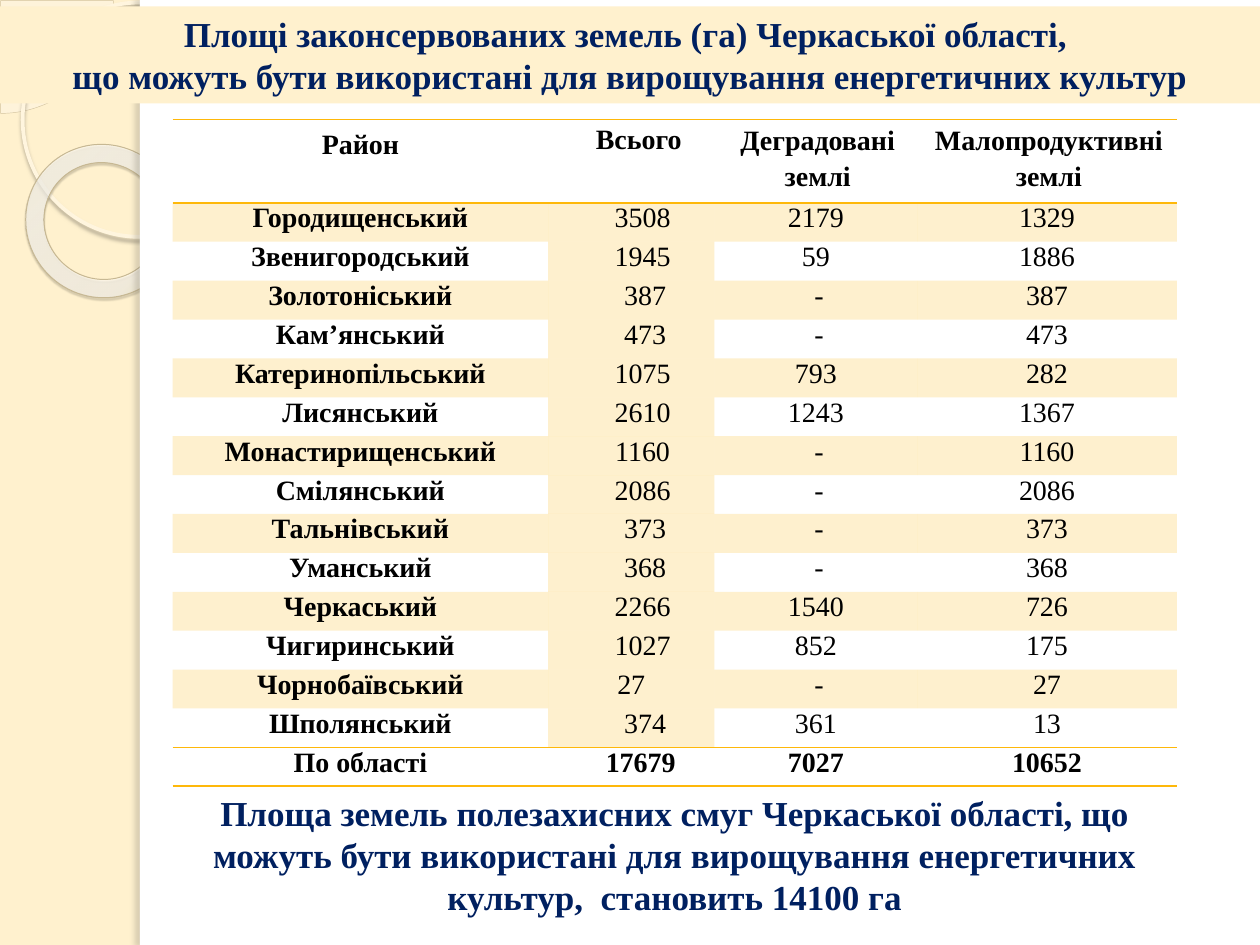
"""Build a slide with a table of set-aside land areas by district."""
from lxml import etree
from pptx import Presentation
from pptx import util as u
from pptx.dml.color import RGBColor
from pptx.enum import shapes, text
from pptx.oxml.ns import nsdecls, qn

FONT = "Times New Roman"
NAVY, BLACK, WHITE, CREAM, GOLD = "002060", "000000", "FFFFFF", "FFF1CE", "FEB80A"
TITLE = [
    "Площі законсервованих земель (га) Черкаської області, ",
    "що можуть бути використані для вирощування енергетичних культур",
]
CLOSING = [
    "Площа земель полезахисних смуг Черкаської області, що можуть бути "
    "використані для вирощування енергетичних культур,  становить 14100 га"
]
ROWS = [
    ("Район", "Всього", "Деградовані\nземлі", "Малопродуктивні\nземлі"),
    ("Городищенський", "3508", "2179", "1329"),
    ("Звенигородський", "1945", "59", "1886"),
    ("Золотоніський", "387", "-", "387"),
    ("Кам’янський", "473", "-", "473"),
    ("Катеринопільський", "1075", "793", "282"),
    ("Лисянський", "2610", "1243", "1367"),
    ("Монастирищенський", "1160", "-", "1160"),
    ("Смілянський", "2086", "-", "2086"),
    ("Тальнівський", "373", "-", "373"),
    ("Уманський", "368", "-", "368"),
    ("Черкаський", "2266", "1540", "726"),
    ("Чигиринський", "1027", "852", "175"),
    ("Чорнобаївський", "27", "-", "27"),
    ("Шполянський", "374", "361", "13"),
    ("По області", "17679", "7027", "10652"),
]
LAST = len(ROWS) - 1
COLUMN_WIDTHS = (2.98, 1.32, 1.61, 2.06)
HEADER_HEIGHT, TABLE_HEIGHT = 0.66, 5.29
HEADER_TOPS = (0.08, 0.04, 0.01, 0.01)
TOTAL_INDENTS = {2: 0, 3: 0.22, 4: 0.18, 5: 0.15, 6: 0.12}
NO_STYLE = "{2D5ABB26-0587-4C30-8999-92F81FD0307C}"
RING_STOPS = [(0, "FFFCF6", 70), (70, "FFFEFB", 55), (100, "F0D28E", 60)]


def color(value):
    return RGBColor.from_string(value)


def inches(values):
    return [u.Inches(value) for value in values]


def xml(markup):
    return etree.fromstring(markup.replace(">", f" {nsdecls('a')}>", 1))


def tint(value, alpha):
    return f'<a:srgbClr val="{value}"><a:alpha val="{alpha * 1000}"/></a:srgbClr>'


def fill_solid(fill, value, alpha=100, owner=None):
    fill.solid()
    fill.fore_color.rgb = color(value)
    if alpha < 100:
        solid = owner.find(qn("a:solidFill"))
        solid.getparent().replace(solid, xml(f"<a:solidFill>{tint(value, alpha)}</a:solidFill>"))


def add_shape(slide, kind, box, fill=None, alpha=100, line=None, shadow=None):
    shape = slide.shapes.add_shape(kind, *inches(box))
    properties = shape.element.spPr
    if fill:
        fill_solid(shape.fill, fill, alpha, properties)
    else:
        shape.fill.background()
    if line:
        shape.line.color.rgb = color(line[0])
        shape.line.width = u.Pt(line[1])
    else:
        shape.line.fill.background()
    shape.shadow.inherit = False
    if shadow:
        value, opacity, blur, distance, angle = shadow
        properties.find(qn("a:effectLst")).append(xml(
            f'<a:outerShdw blurRad="{u.Pt(blur)}" dist="{u.Pt(distance)}" '
            f'dir="{angle * 60000}">{tint(value, opacity)}</a:outerShdw>'))
    return shape


def write(frame, lines, size, value, bold=True, spacing=None):
    frame.text = "\n".join(lines)
    for paragraph in frame.paragraphs:
        paragraph.alignment = text.PP_ALIGN.CENTER
        paragraph.line_spacing = spacing
        font = paragraph.font
        font.name, font.size, font.bold = FONT, u.Pt(size), bold
        font.color.rgb = color(value)


def add_decoration(slide):
    kinds = shapes.MSO_SHAPE
    pie = add_shape(slide, kinds.PIE, (-0.89, -0.89, 1.79, 1.79), "FEFAF4", 33, ("D3C39F", 0.25))
    pie.adjustments[0], pie.adjustments[1] = 0, 54.02
    add_shape(slide, kinds.OVAL, (0.18, 0.02, 1.86, 1.86), line=("FFF5DE", 2.15),
              shadow=("B0A68F", 85, 2, 2, 90))
    ring = add_shape(slide, kinds.DONUT, (0.2, 1.15, 1.23, 1.21), line=("C7B893", 0.58),
                     shadow=("5A5444", 35, 1, 1.2, 75))
    ring.adjustments[0], ring.rotation = 0.12, 38.6
    stops = "".join(f'<a:gs pos="{place * 1000}">{tint(value, alpha)}</a:gs>'
                    for place, value, alpha in RING_STOPS)
    properties = ring.element.spPr
    properties.replace(properties.find(qn("a:noFill")), xml(
        f'<a:gradFill rotWithShape="1"><a:gsLst>{stops}</a:gsLst><a:path path="circle">'
        '<a:fillToRect l="-408000" t="-50000" r="508000" b="150000"/></a:path></a:gradFill>'))
    add_shape(slide, kinds.RECTANGLE, (1.11, 0, 8.89, 7.5), WHITE)
    add_shape(slide, kinds.RECTANGLE, (1.11, 0, 0.08, 7.5), WHITE,
              shadow=("736F63", 25, 3, 3, 180))


def add_title(slide):
    title = slide.shapes.title
    title.left, title.top, title.width, title.height = inches((0, 0.05, 10, 0.77))
    fill_solid(title.fill, CREAM)
    write(title.text_frame, TITLE, 20, NAVY, spacing=1)
    title.text_frame.auto_size = text.MSO_AUTO_SIZE.NONE
    title.text_frame.vertical_anchor = text.MSO_ANCHOR.TOP
    slide.shapes.element.append(title.element)


def left_indent(row, column, value):
    if column == 1:
        return TOTAL_INDENTS[len(value)]
    if value == "-":
        return 0.05
    return 0.03 if row == 0 and column > 1 else 0


def add_area_table(slide):
    box = inches((1.37, 0.95, sum(COLUMN_WIDTHS), TABLE_HEIGHT))
    frame = slide.shapes.add_table(len(ROWS), len(COLUMN_WIDTHS), *box)
    table = frame.table
    table.first_row = table.horz_banding = False
    next(frame.element.iter(qn("a:tableStyleId"))).text = NO_STYLE
    for column, width in zip(table.columns, COLUMN_WIDTHS):
        column.width = u.Inches(width)
    for r, values in enumerate(ROWS):
        table.rows[r].height = u.Inches((TABLE_HEIGHT - HEADER_HEIGHT) / LAST if r else HEADER_HEIGHT)
        for c, value in enumerate(values):
            cell = table.cell(r, c)
            cell.margin_left = u.Inches(left_indent(r, c, value))
            cell.margin_top = u.Inches(0 if r else HEADER_TOPS[c])
            cell.margin_right = cell.margin_bottom = 0
            lines = value.split("\n")
            edge_row = r in (0, LAST)
            write(cell.text_frame, lines, 16, BLACK, edge_row or c == 0,
                  u.Pt(20.6) if len(lines) > 1 else None)
            properties = cell._tc.get_or_add_tcPr()
            if edge_row:
                for side in ("lnT", "lnB"):
                    properties.append(xml(f'<a:{side} w="{u.Pt(1)}"><a:solidFill>'
                                          f'{tint(GOLD, 100)}</a:solidFill></a:{side}>'))
            elif r % 2 or c == 1:
                fill_solid(cell.fill, GOLD, 20, properties)


def add_closing(slide):
    frame = slide.shapes.add_textbox(*inches((1.22, 6.23, 8.27, 1.11))).text_frame
    frame.word_wrap = True
    write(frame, CLOSING, 20, NAVY)


def main():
    presentation = Presentation()
    presentation.slide_width, presentation.slide_height = inches((10, 7.5))
    slide = presentation.slides.add_slide(presentation.slide_layouts[5])
    fill_solid(slide.background.fill, CREAM)
    add_decoration(slide)
    add_title(slide)
    add_area_table(slide)
    add_closing(slide)
    presentation.save("out.pptx")


if __name__ == "__main__":
    main()
